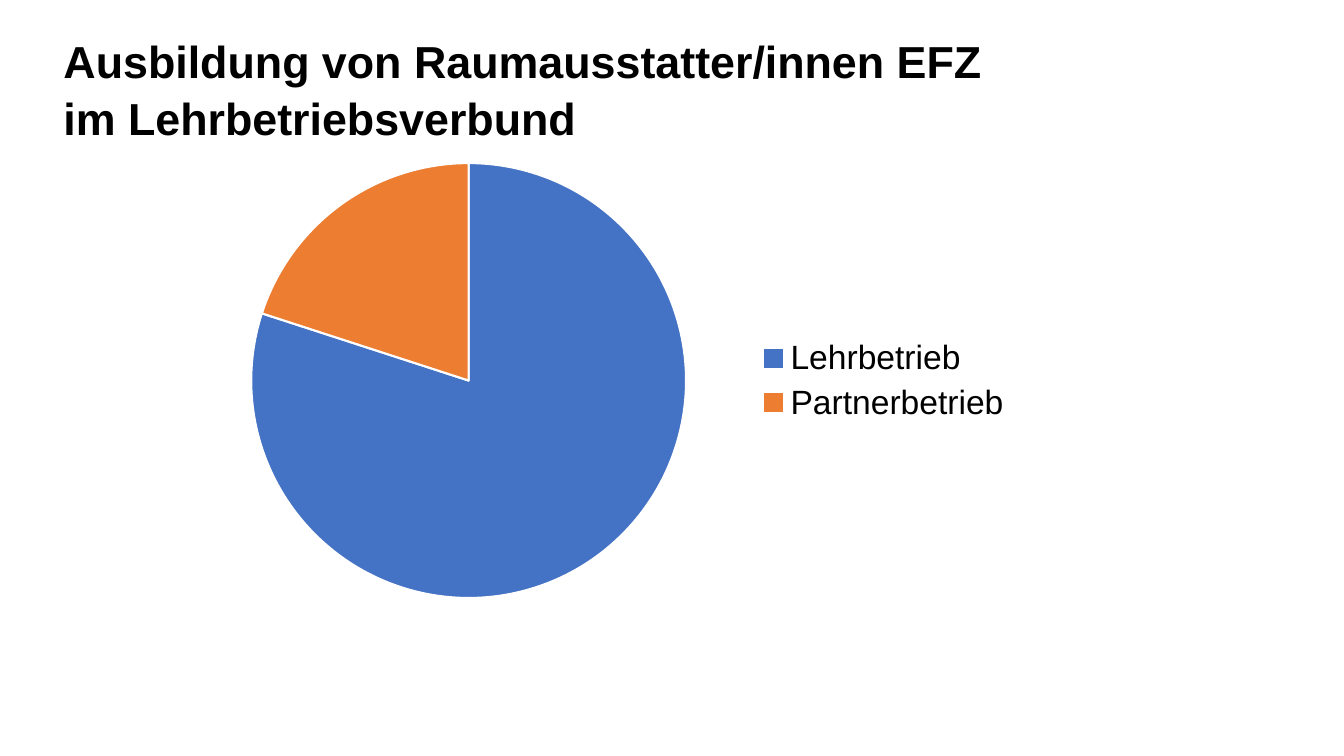
"""Build the slide on training in a network of host firms."""
from dataclasses import dataclass

from pptx import Presentation
from pptx.chart.data import CategoryChartData
from pptx.dml.color import RGBColor
from pptx.enum.chart import XL_CHART_TYPE, XL_LEGEND_POSITION
from pptx.slide import Slide
from pptx.util import Cm, Pt

BLACK = RGBColor(0x00, 0x00, 0x00)
WHITE = RGBColor(0xFF, 0xFF, 0xFF)
BLUE = RGBColor(0x44, 0x72, 0xC4)
ORANGE = RGBColor(0xED, 0x7D, 0x31)


@dataclass(frozen=True)
class Share:
    """One slice of the pie."""
    name: str
    value: int
    color: RGBColor


SHARES = [Share("Lehrbetrieb", 80, BLUE), Share("Partnerbetrieb", 20, ORANGE)]
TITLE = ["Ausbildung von Raumausstatter/innen EFZ", "im Lehrbetriebsverbund"]


def add_pie(slide: Slide, shares: list[Share]) -> None:
    """Draw the shares as a pie with its legend on the right."""
    data = CategoryChartData()
    data.categories = [share.name for share in shares]
    data.add_series("Series 1", [share.value for share in shares])
    chart = slide.shapes.add_chart(
        XL_CHART_TYPE.PIE, Cm(4.67), Cm(3.76), Cm(21.11), Cm(11.66), data
    ).chart
    chart.has_title = False
    chart.font.name = "Calibri"
    chart.font.size = Pt(10)
    chart.font.color.rgb = BLACK

    chart.has_legend = True
    legend = chart.legend
    legend.position = XL_LEGEND_POSITION.RIGHT
    legend.include_in_layout = False
    legend.font.name = "Arial"
    legend.font.size = Pt(24)
    legend.font.color.rgb = BLACK

    plot = chart.plots[0]
    plot.vary_by_categories = True
    for index, share in enumerate(shares):
        style = plot.series[0].points[index].format
        style.fill.solid()
        style.fill.fore_color.rgb = share.color
        style.line.color.rgb = WHITE
        style.line.width = Pt(1.5)


def add_title(slide: Slide, lines: list[str]) -> None:
    """Write the title, one run per line."""
    box = slide.shapes.add_textbox(Cm(1.35), Cm(0.66), Cm(29.21), Cm(3))
    frame = box.text_frame
    frame.word_wrap = True
    para = frame.paragraphs[0]
    para.line_spacing = 1.05
    for index, line in enumerate(lines):
        if index:
            para.add_line_break()
        run = para.add_run()
        run.text = line
        run.font.name = "Arial"
        run.font.size = Pt(32)
        run.font.bold = True
        run.font.color.rgb = BLACK


def main() -> None:
    """Make the deck and save it."""
    deck = Presentation()
    deck.slide_width = Cm(33.87)
    deck.slide_height = Cm(19.05)
    slide = deck.slides.add_slide(deck.slide_layouts[6])
    add_pie(slide, SHARES)
    add_title(slide, TITLE)
    deck.save("out.pptx")


if __name__ == "__main__":
    main()
